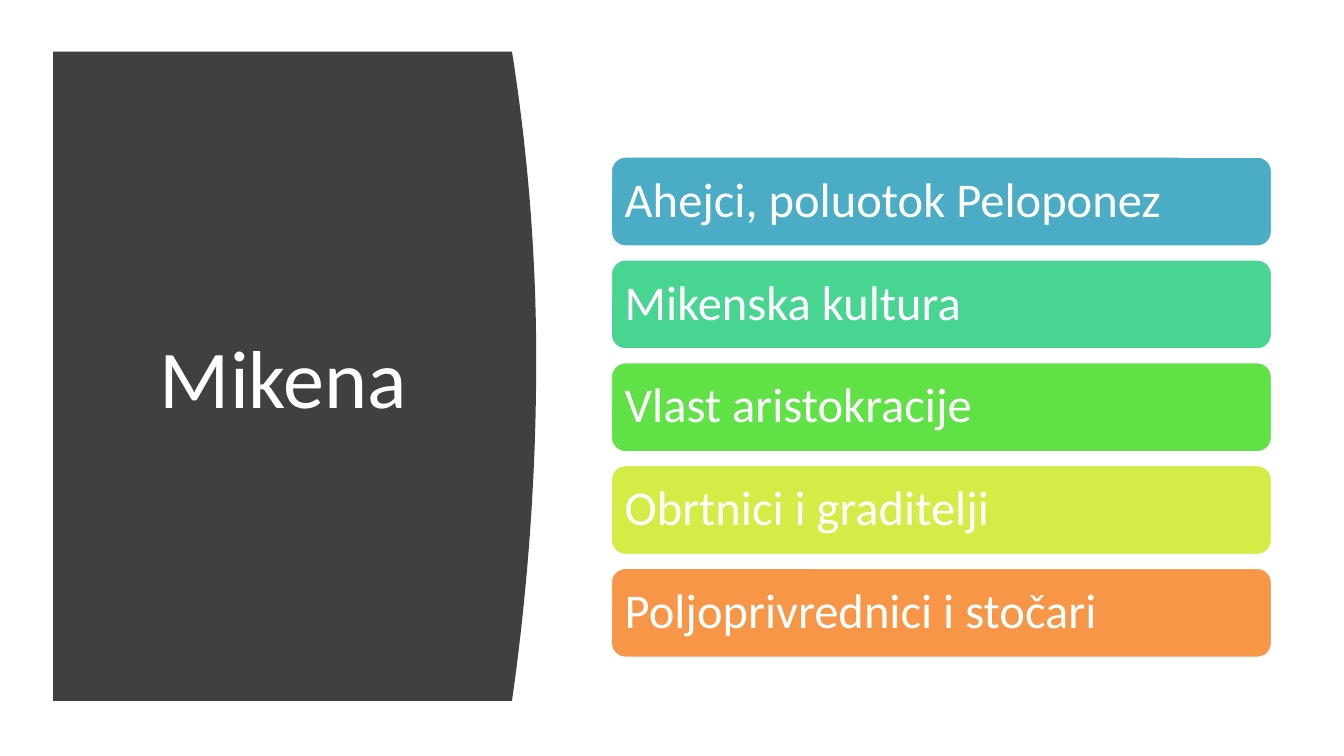
from dataclasses import dataclass

from pptx import Presentation
from pptx import util as u
from pptx.dml.color import RGBColor
from pptx.enum import shapes, text

PX = u.Inches(1) // 200
COLORS = {
    "panel": "404040",
    "white": "FFFFFF",
    "blue": "4BACC6",
    "mint": "48D491",
    "green": "60E146",
    "lime": "D5EC46",
    "orange": "F79646",
}
FONT = "Calibri"
SLIDE_WIDTH, SLIDE_HEIGHT = 2000, 1125
PANEL_LEFT, PANEL_TOP, PANEL_BOTTOM = 79, 77, 1043
PANEL_CORNER, PANEL_BULGE, PANEL_PEAK = 762, 36, 535
CURVE_STEPS = 48
BAR_LEFT, BAR_TOP, BAR_WIDTH, BAR_HEIGHT = 908, 232, 986, 136
BAR_SPAN = 612
BAR_MARGIN = 15


@dataclass(frozen=True)
class Bar:
    label: str
    color: str


BARS = [
    Bar("Ahejci, poluotok Peloponez", "blue"),
    Bar("Mikenska kultura", "mint"),
    Bar("Vlast aristokracije", "green"),
    Bar("Obrtnici i graditelji", "lime"),
    Bar("Poljoprivrednici i stočari", "orange"),
]


def px(value: float) -> int:
    return round(value * PX)


def color(name: str) -> RGBColor:
    return RGBColor.from_string(COLORS[name])


def paint(shape, fill: str) -> None:
    shape.shadow.inherit = False
    shape.fill.solid()
    shape.fill.fore_color.rgb = color(fill)


def write(shape, label: str, size: int, alignment) -> None:
    frame = shape.text_frame
    frame.word_wrap = True
    frame.vertical_anchor = text.MSO_ANCHOR.MIDDLE
    paragraph = frame.paragraphs[0]
    paragraph.alignment = alignment
    run = paragraph.add_run()
    run.text = label
    run.font.name = FONT
    run.font.size = u.Pt(size)
    run.font.color.rgb = color("white")


def curve_x(y: float) -> float:
    end = PANEL_TOP if y < PANEL_PEAK else PANEL_BOTTOM
    distance = (y - PANEL_PEAK) / (end - PANEL_PEAK)
    return PANEL_CORNER + PANEL_BULGE * (1 - distance ** 2)


def draw_panel(slide) -> None:
    step = (PANEL_BOTTOM - PANEL_TOP) / CURVE_STEPS
    heights = [PANEL_TOP + index * step for index in range(CURVE_STEPS + 1)]
    points = [(px(curve_x(y)), px(y)) for y in heights]
    points.append((px(PANEL_LEFT), px(PANEL_BOTTOM)))
    builder = slide.shapes.build_freeform(px(PANEL_LEFT), px(PANEL_TOP))
    builder.add_line_segments(points, close=True)
    panel = builder.convert_to_shape()
    paint(panel, "panel")
    panel.line.fill.background()


def draw_title(slide) -> None:
    title = slide.shapes.add_textbox(px(142), px(166), px(560), px(786))
    write(title, "Mikena", 44, text.PP_ALIGN.CENTER)


def draw_bar(slide, bar: Bar, top: float) -> None:
    shape = slide.shapes.add_shape(
        shapes.MSO_SHAPE.ROUNDED_RECTANGLE,
        px(BAR_LEFT), px(top), px(BAR_WIDTH), px(BAR_HEIGHT),
    )
    paint(shape, bar.color)
    shape.line.color.rgb = color("white")
    shape.line.width = u.Pt(2)
    frame = shape.text_frame
    frame.margin_left = frame.margin_right = px(BAR_MARGIN)
    frame.margin_top = frame.margin_bottom = px(BAR_MARGIN)
    write(shape, bar.label, 26, text.PP_ALIGN.LEFT)
    frame.paragraphs[0].line_spacing = 0.9


def main() -> None:
    presentation = Presentation()
    presentation.slide_width = px(SLIDE_WIDTH)
    presentation.slide_height = px(SLIDE_HEIGHT)
    slide = presentation.slides.add_slide(presentation.slide_layouts[6])
    draw_panel(slide)
    draw_title(slide)
    pitch = BAR_SPAN / (len(BARS) - 1)
    for index, bar in enumerate(BARS):
        draw_bar(slide, bar, BAR_TOP + index * pitch)
    presentation.save("out.pptx")


if __name__ == "__main__":
    main()
